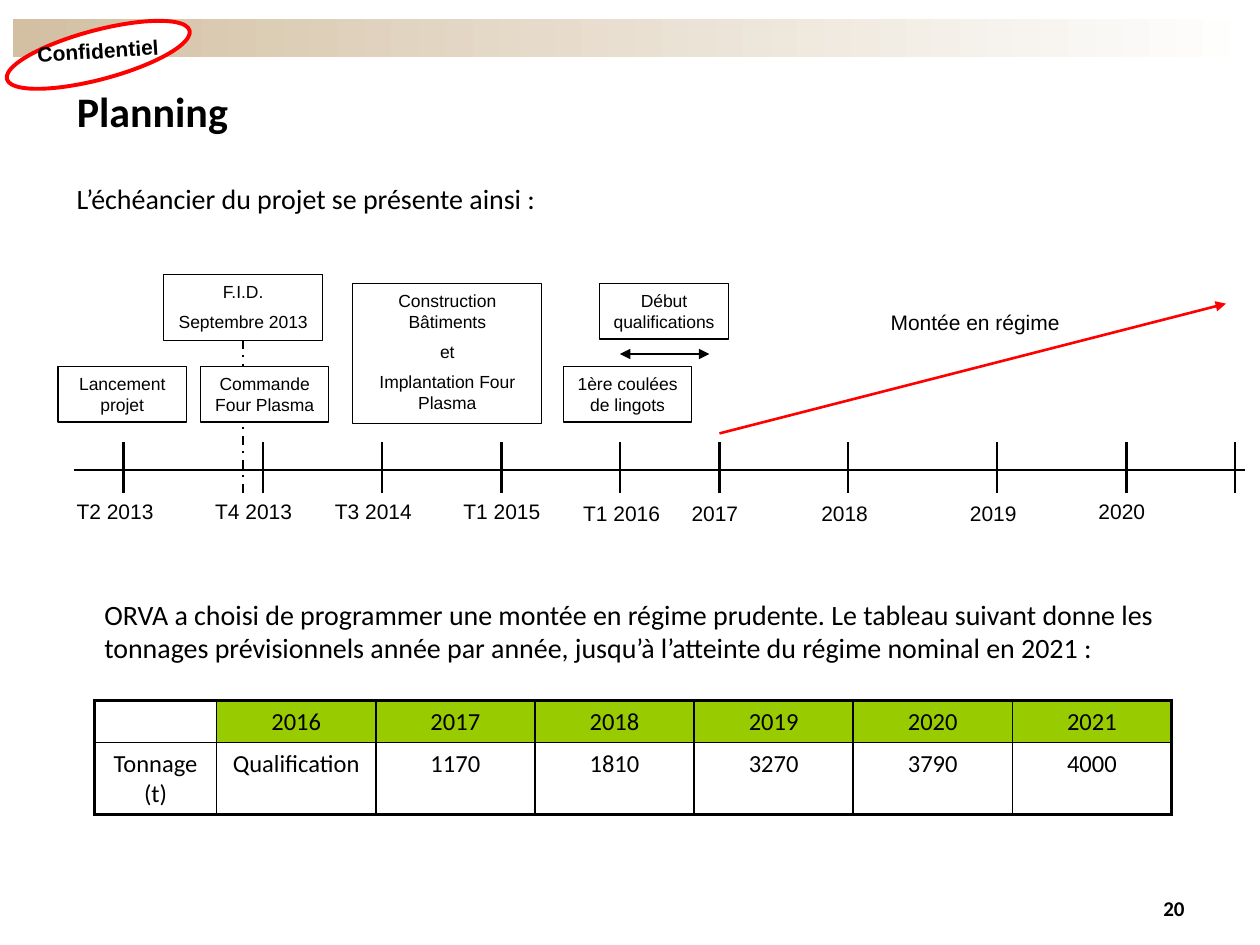
from lxml.etree import SubElement
from pptx import Presentation
from pptx.dml.color import RGBColor
from pptx.enum.dml import MSO_LINE
from pptx.enum.shapes import MSO_CONNECTOR, MSO_SHAPE
from pptx.enum.text import MSO_ANCHOR, PP_ALIGN
from pptx.oxml.ns import qn
from pptx.util import Inches, Pt

BLACK, WHITE, RED, GREEN, SAND = "000000", "FFFFFF", "FF0000", "99CC00", "D3C0A3"
COLUMNS, ROWS = 100, 75


def color(value):
    return RGBColor.from_string(value)


def write(frame, text, font="Arial", size=12, bold=False, align=PP_ALIGN.LEFT,
          gap=0, margin=0, anchor=MSO_ANCHOR.TOP):
    frame.word_wrap = True
    frame.vertical_anchor = anchor
    for index, line in enumerate(text.split("\n")):
        para = frame.paragraphs[0] if index == 0 else frame.add_paragraph()
        para.alignment = align
        if index:
            para.space_before = Pt(gap)
        if margin:
            para._p.get_or_add_pPr().set("marL", str(Inches(margin)))
        span = para.add_run()
        span.text = line
        span.font.name, span.font.size, span.font.bold = font, Pt(size), bold
        span.font.color.rgb = color(BLACK)


class PlanningPage:
    def __init__(self, deck):
        self.page = deck.slides.add_slide(deck.slide_layouts[5])
        self.shapes = self.page.shapes
        self.column = deck.slide_width / COLUMNS
        self.row = deck.slide_height / ROWS

    def place(self, left, top, width, height):
        return (round(left * self.column), round(top * self.row),
                round(width * self.column), round(height * self.row))

    def title(self, area, text, **style):
        title = self.shapes.title
        title.left, title.top, title.width, title.height = self.place(*area)
        write(title.text_frame, text, anchor=MSO_ANCHOR.MIDDLE, **style)

    def text(self, area, text, turn=0, fill=None, **style):
        box = self.shapes.add_textbox(*self.place(*area))
        box.rotation = turn
        if fill:
            box.fill.solid()
            box.fill.fore_color.rgb = color(fill)
        write(box.text_frame, text, **style)

    def shape(self, area, kind=MSO_SHAPE.RECTANGLE, fill=None, line=None, weight=0.75):
        shape = self.shapes.add_shape(kind, *self.place(*area))
        shape.shadow.inherit = False
        if fill:
            shape.fill.solid()
            shape.fill.fore_color.rgb = color(fill)
        else:
            shape.fill.background()
        if line:
            shape.line.color.rgb = color(line)
            shape.line.width = Pt(weight)
        else:
            shape.line.fill.background()
        return shape

    def band(self, area, start, end):
        fill = self.shape(area).fill
        fill.gradient()
        fill.gradient_angle = 0
        for stop, value, position in zip(fill.gradient_stops, (start, end), (0, 1)):
            stop.color.rgb = color(value)
            stop.position = position

    def step(self, area, text, fill=None):
        shape = self.shape(area, fill=fill, line=BLACK)
        write(shape.text_frame, text, size=10, align=PP_ALIGN.CENTER, gap=5.2)
        return shape

    def line(self, start, end, weight=0.75, line=BLACK, dash=None, arrows=()):
        connector = self.shapes.add_connector(
            MSO_CONNECTOR.STRAIGHT, *self.place(*start, *end))
        connector.line.color.rgb = color(line)
        connector.line.width = Pt(weight)
        if dash:
            connector.line.dash_style = dash
        for side in arrows:
            SubElement(connector.line._get_or_add_ln(), qn(f"a:{side}"), type="triangle")
        SubElement(connector._element.spPr, qn("a:effectLst"))
        return connector

    def border(self, cell, side, weight):
        edge = SubElement(cell._tc.get_or_add_tcPr(), qn(f"a:ln{side}"), w=str(Pt(weight)))
        SubElement(SubElement(edge, qn("a:solidFill")), qn("a:srgbClr"), val=BLACK)

    def table(self, area, data, widths, heights, size=14):
        last_row, last_column = len(data) - 1, len(widths) - 1
        table = self.shapes.add_table(len(data), len(widths), *self.place(*area)).table
        table.first_row = table.horz_banding = False
        for column, width in zip(table.columns, widths):
            column.width = round(width * self.column)
        for row, height in zip(table.rows, heights):
            row.height = round(height * self.row)
        for r, values in enumerate(data):
            for c, value in enumerate(values):
                cell = table.cell(r, c)
                outer = {"L": c == 0, "R": c == last_column, "T": r == 0, "B": r == last_row}
                for side, thick in outer.items():
                    self.border(cell, side, 2.25 if thick else 1)
                cell.fill.solid()
                cell.fill.fore_color.rgb = color(GREEN if r == 0 and c else WHITE)
                if value:
                    write(cell.text_frame, value, font="Calibri", size=size,
                          align=PP_ALIGN.CENTER)
                else:
                    SubElement(cell.text_frame.paragraphs[0]._p, qn("a:endParaRPr"),
                               sz=str(size * 100))
                    cell.margin_top = cell.margin_bottom = 0


def main():
    deck = Presentation()
    deck.slide_width, deck.slide_height = Inches(10), Inches(7.5)
    page = PlanningPage(deck)

    page.band((1, 1.5, 98.8, 3), SAND, WHITE)
    stamp = page.shape((0.3, 2.4, 15, 3.9), MSO_SHAPE.OVAL, WHITE, RED, 2.25)
    stamp.rotation = 345.1
    page.text((0.8, 2.5, 14, 3.7), "Confidentiel", turn=356.3, bold=True,
              align=PP_ALIGN.CENTER)

    page.title((5.1, 5.2, 90, 7.1), "Planning", font="Calibri", size=24, bold=True)
    page.text((5.1, 13.9, 90, 4.1), "L’échéancier du projet se présente ainsi :",
              font="Calibri", size=16)
    page.text((3.5, 46.9, 91.3, 7.1),
              "ORVA a choisi de programmer une montée en régime prudente. Le tableau suivant "
              "donne les tonnages prévisionnels année par année, jusqu’à l’atteinte du régime "
              "nominal en 2021 :", font="Calibri", size=16, margin=0.38)

    tick_top, tick_bottom = 35.1, 39.1
    dates = [("T2 2013", 5.1, 39.1), ("T4 2013", 16.1, 39.1), ("T3 2014", 25.6, 39.1),
             ("T1 2015", 35.8, 39.1), ("T1 2016", 45.3, 39.2), ("2017", 53.9, 39.2),
             ("2018", 64.2, 39.2), ("2019", 76, 39.2), ("2020", 86.2, 39.1)]
    for date, left, top in dates:
        page.text((left, top, 8.7, 3), date, fill=WHITE)
    for tick in (9.8, 20.9, 30.3, 39.8, 49.2, 57.1, 67.3, 79.1, 89.4, 98):
        page.line((tick, tick_bottom), (tick, tick_top), 1.25)
    page.line((5.9, 37.3), (98.8, 37.3))

    decision = page.step((13, 21.8, 12.6, 5.2), "F.I.D.\nSeptembre 2013")
    milestone = page.line((19.3, tick_bottom), (19.3, 27), 1.25, dash=MSO_LINE.DASH_DOT)
    milestone.end_connect(decision, 2)
    page.step((4.6, 29.1, 10.2, 4.4), "Lancement projet")
    page.step((15.9, 29.1, 10.2, 4.4), "Commande Four Plasma", fill=WHITE)
    page.step((28, 22.5, 15, 11.1), "Construction Bâtiments\net\nImplantation Four Plasma")
    page.step((44.7, 29.1, 10.2, 4.4), "1ère coulées de lingots")
    page.step((47.6, 22.5, 10.2, 4.4), "Début qualifications")
    page.line((49.2, 28.1), (56.3, 28.1), arrows=("headEnd", "tailEnd"))
    page.line((57.1, 34.4), (97.3, 24.1), 1.5, RED, arrows=("tailEnd",))
    page.text((69.7, 24.1, 16.5, 3), "Montée en régime")

    tonnages = [("", "2016", "2017", "2018", "2019", "2020", "2021"),
                ("Tonnage (t)", "Qualification", "1170", "1810", "3270", "3790", "4000")]
    page.table((7.5, 55.6, 85.5, 9), tonnages, [9.7] + [12.63] * 6, [3.3, 5.7])
    page.text((88.6, 70.6, 6.4, 2.9), "20", font="Calibri", bold=True, align=PP_ALIGN.RIGHT)

    deck.save("out.pptx")


if __name__ == "__main__":
    main()
